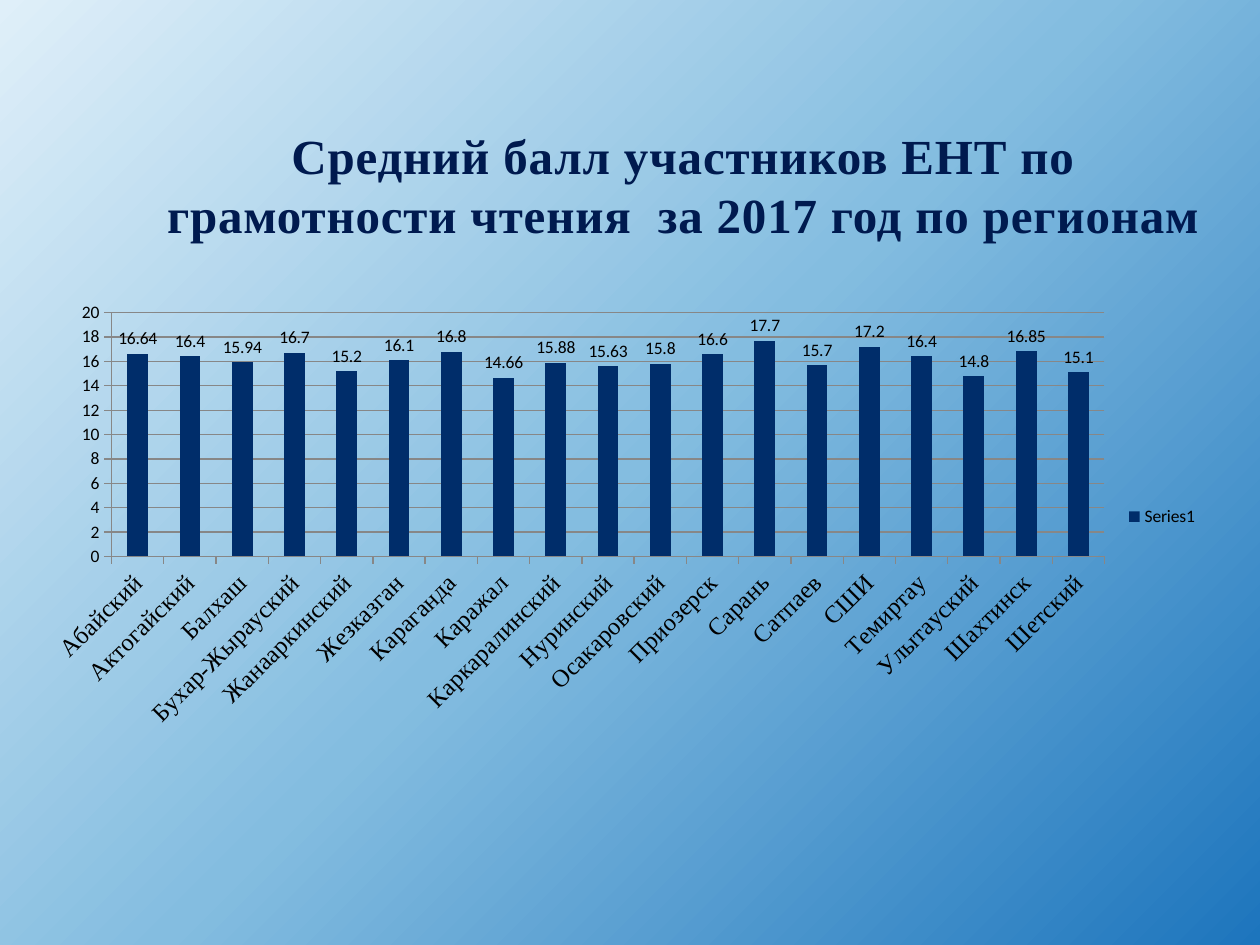
from copy import deepcopy

from lxml.etree import SubElement
from pptx import Presentation
from pptx.chart.data import CategoryChartData
from pptx.dml.color import RGBColor
from pptx.enum.chart import XL_CHART_TYPE, XL_LABEL_POSITION, XL_LEGEND_POSITION, XL_TICK_MARK
from pptx.enum.text import MSO_ANCHOR, PP_ALIGN
from pptx.oxml.ns import qn
from pptx.util import Pt

SCORES = {
    "Абайский": 16.64, "Актогайский": 16.4, "Балхаш": 15.94,
    "Бухар-Жырауский": 16.7, "Жанааркинский": 15.2, "Жезказган": 16.1,
    "Караганда": 16.8, "Каражал": 14.66, "Каркаралинский": 15.88,
    "Нуринский": 15.63, "Осакаровский": 15.8, "Приозерск": 16.6,
    "Сарань": 17.7, "Сатпаев": 15.7, "СШИ": 17.2, "Темиртау": 16.4,
    "Улытауский": 14.8, "Шахтинск": 16.85, "Шетский": 15.1,
}


def color(value):
    return RGBColor.from_string(value)


def paint_background(slide):
    fill = slide.background.fill
    fill.gradient()
    fill.gradient_angle = 135
    # The default gradient has two stops; a third goes between them
    first_stop = slide.background._cSld.find(".//" + qn("a:gs"))
    first_stop.addnext(deepcopy(first_stop))
    stops = [(0, "1D75BD"), (0.5, "84BDE0"), (1, "DFEFF9")]
    for stop, (position, shade) in zip(fill.gradient_stops, stops):
        stop.position = position
        stop.color.rgb = color(shade)


def add_title(slide, left, top, width, height):
    frame = slide.shapes.add_textbox(Pt(left), Pt(top), Pt(width), Pt(height)).text_frame
    frame.word_wrap = True
    frame.vertical_anchor = MSO_ANCHOR.BOTTOM
    frame.margin_bottom = Pt(36)
    title = frame.paragraphs[0]
    title.alignment = PP_ALIGN.CENTER
    title.font.name = "Times New Roman"
    title.font.size = Pt(28)
    title.font.bold = True
    title.font.color.rgb = color("001A4F")
    heading = title.add_run()
    heading.text = "Средний балл участников ЕНТ по грамотности чтения  за 2017 год по регионам"
    heading._r.get_or_add_rPr().set("spc", "50")  # letter spacing of 0.5 pt


def style_line(line):
    line.width = Pt(0.75)
    line.color.rgb = color("878787")


def set_plot_area(chart, **fractions):
    plot_area = chart._chartSpace.chart.plotArea
    layout = plot_area.get_or_add_layout() if hasattr(plot_area, "get_or_add_layout") else None
    if layout is None:
        layout = plot_area.find(qn("c:layout"))
    if layout is None:
        layout = SubElement(plot_area, qn("c:layout"))
        plot_area.insert(0, layout)
    manual = SubElement(layout, qn("c:manualLayout"))
    settings = {"layoutTarget": "inner", "xMode": "edge", "yMode": "edge", **fractions}
    for tag, value in settings.items():
        SubElement(manual, qn(f"c:{tag}")).set("val", str(value))


def add_score_chart(slide, left, top, width, height):
    data = CategoryChartData()
    data.categories = list(SCORES)
    data.add_series("Series1", list(SCORES.values()))
    chart = slide.shapes.add_chart(
        XL_CHART_TYPE.COLUMN_CLUSTERED, Pt(left), Pt(top), Pt(width), Pt(height), data
    ).chart
    chart.has_title = False
    chart.font.name = "Calibri"
    chart.font.size = Pt(10)
    chart.font.color.rgb = color("000000")
    set_plot_area(chart, x=0.07, y=0.04, w=0.84, h=0.55)

    # Legend
    chart.has_legend = True
    chart.legend.position = XL_LEGEND_POSITION.RIGHT
    chart.legend.include_in_layout = False

    # Columns and their values
    plot = chart.plots[0]
    plot.gap_width = 150
    plot.vary_by_categories = False
    columns = plot.series[0]
    columns.format.fill.solid()
    columns.format.fill.fore_color.rgb = color("002D6A")
    labels = columns.data_labels
    labels.show_value = True
    labels.position = XL_LABEL_POSITION.OUTSIDE_END

    # Axes
    regions, points = chart.category_axis, chart.value_axis
    for axis in (regions, points):
        axis.major_tick_mark = XL_TICK_MARK.OUTSIDE
        style_line(axis.format.line)
    regions.tick_labels.font.name = "Times New Roman"
    regions.tick_labels.font.size = Pt(14)
    regions._element.find(qn("c:txPr")).find(qn("a:bodyPr")).set("rot", "-2700000")
    points.minimum_scale, points.maximum_scale, points.major_unit = 0, 20, 2
    points.has_major_gridlines = True
    style_line(points.major_gridlines.format.line)


def main():
    deck = Presentation()
    deck.slide_width, deck.slide_height = Pt(720), Pt(540)
    slide = deck.slides.add_slide(deck.slide_layouts[6])
    paint_background(slide)
    add_title(slide, 84, 16.5, 613.5, 158.5)
    add_score_chart(slide, 16.5, 168.5, 675.5, 253.5)
    deck.save("out.pptx")


if __name__ == "__main__":
    main()
